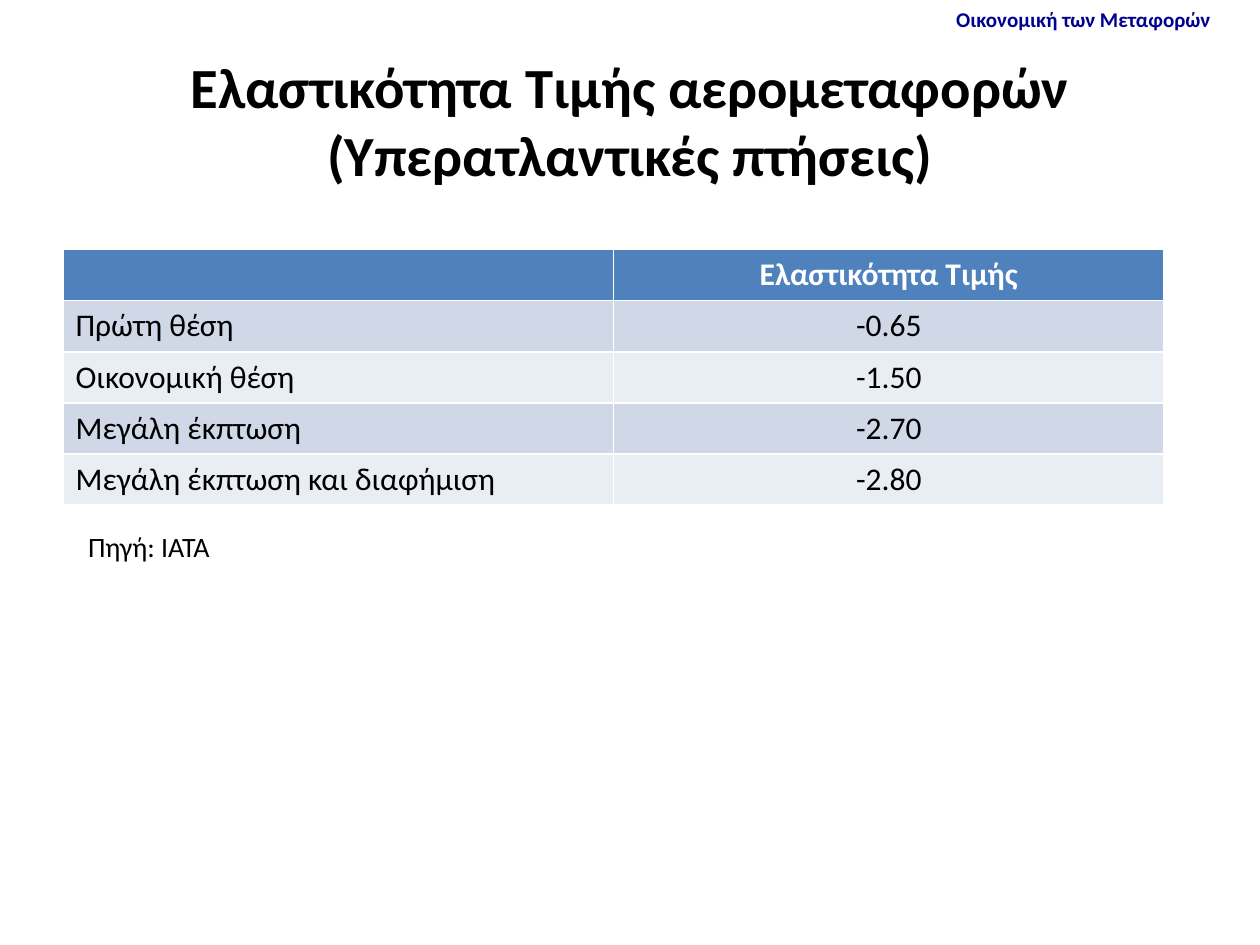
from pptx import Presentation
from pptx.dml.color import RGBColor
from pptx.enum import text
from pptx.util import Pt

NAVY = RGBColor(0x00, 0x00, 0x90)
BLACK = RGBColor(0x00, 0x00, 0x00)
WHITE = RGBColor(0xFF, 0xFF, 0xFF)
BLUE = RGBColor(0x4F, 0x81, 0xBD)
BANDS = [RGBColor(0xD0, 0xD8, 0xE8), RGBColor(0xE9, 0xED, 0xF4)]
LEFT, MID = text.PP_ALIGN.LEFT, text.PP_ALIGN.CENTER


def write(frame, words, size=18, color=BLACK, bold=False, align=LEFT):
    para = frame.paragraphs[0]
    para.alignment = align
    run = para.add_run()
    run.text = words
    font = run.font
    font.name = "Calibri"
    font.size = Pt(size)
    font.bold = bold
    font.color.rgb = color


def label(words, left, top, width, height, wrap=False, **style):
    box = slide.shapes.add_textbox(Pt(left), Pt(top), Pt(width), Pt(height))
    frame = box.text_frame
    frame.word_wrap = wrap
    write(frame, words, **style)
    return frame


deck = Presentation()
deck.slide_width, deck.slide_height = Pt(720), Pt(540)
slide = deck.slides.add_slide(deck.slide_layouts[6])

label("Οικονομική των Μεταφορών", 539.3, 0, 162, 21.6, size=12, color=NAVY, bold=True)
title = label("Ελαστικότητα Τιμής αερομεταφορών (Υπερατλαντικές πτήσεις)",
              36, 40.5, 648, 56, wrap=True, size=32.4, bold=True, align=MID)
title.vertical_anchor = text.MSO_ANCHOR.MIDDLE

rows = [
    ("", "Ελαστικότητα Τιμής"),
    ("Πρώτη θέση", "-0.65"),
    ("Οικονομική θέση", "-1.50"),
    ("Μεγάλη έκπτωση", "-2.70"),
    ("Μεγάλη έκπτωση και διαφήμιση", "-2.80"),
]
grid = slide.shapes.add_table(len(rows), 2, Pt(36), Pt(142.6), Pt(629.2), Pt(146)).table
for r, row in enumerate(rows):
    head = r == 0
    for c, words in enumerate(row):
        cell = grid.cell(r, c)
        cell.fill.solid()
        cell.fill.fore_color.rgb = BLUE if head else BANDS[(r - 1) % 2]
        if words:
            write(cell.text_frame, words, color=WHITE if head else BLACK,
                  bold=head, align=MID if c else LEFT)

label("Πηγή: ΙΑΤΑ", 43.2, 298.8, 87.8, 26.6, size=16)

deck.save("out.pptx")
